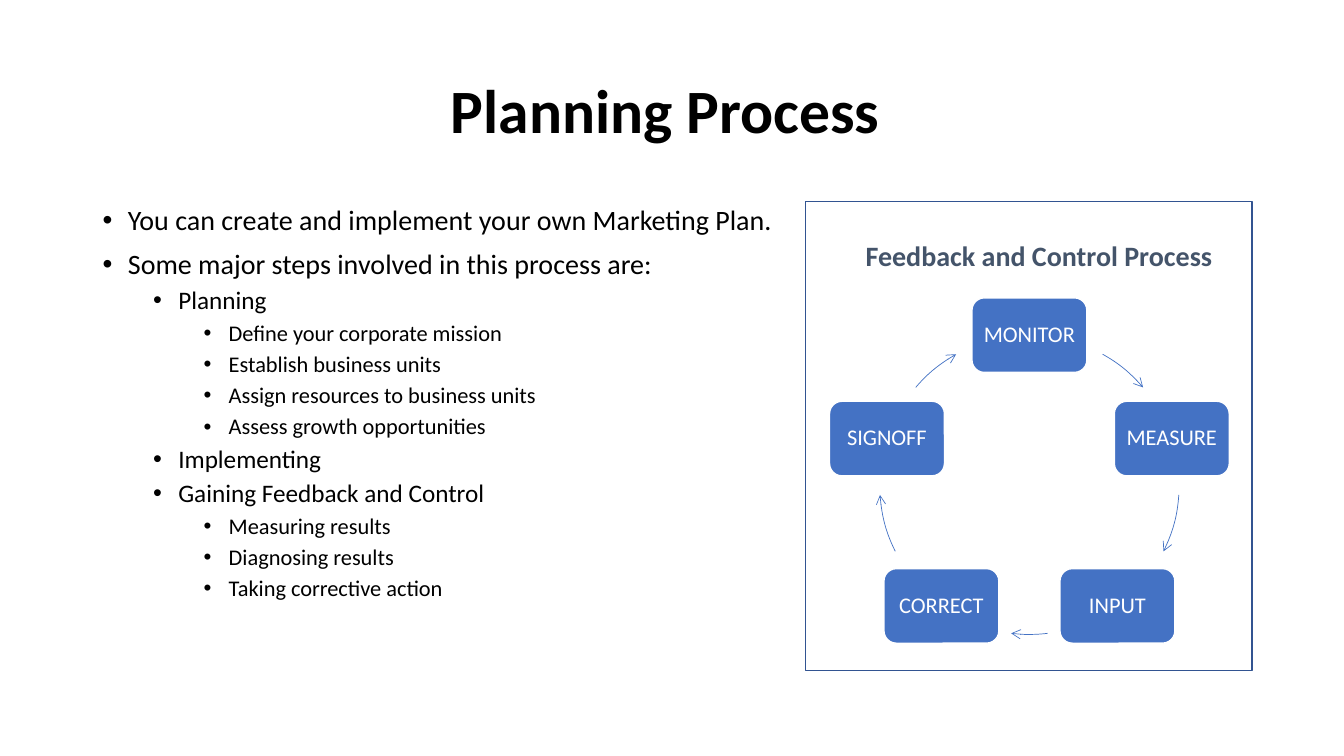
from dataclasses import dataclass
from math import cos, radians, sin

from lxml.etree import SubElement
from pptx import Presentation
from pptx.dml.color import RGBColor
from pptx.enum.shapes import MSO_SHAPE
from pptx.enum.text import MSO_ANCHOR, PP_ALIGN
from pptx.oxml.ns import qn
from pptx.util import Inches, Pt


@dataclass(frozen=True)
class Theme:
    font: str = "Calibri"
    black: str = "000000"
    white: str = "FFFFFF"
    blue: str = "4472C4"
    frame: str = "325491"
    heading: str = "44546A"
    title_size: int = 44
    heading_size: int = 20
    node_size: int = 16
    level_sizes: tuple = (20, 18, 16)


THEME = Theme()

# Outline: level and wording
STEPS = [
    (0, "You can create and implement your own Marketing Plan."),
    (0, "Some major steps involved in this process are:"),
    (1, "Planning"),
    (2, "Define your corporate mission"),
    (2, "Establish business units"),
    (2, "Assign resources to business units"),
    (2, "Assess growth opportunities"),
    (1, "Implementing"),
    (1, "Gaining Feedback and Control"),
    (2, "Measuring results"),
    (2, "Diagnosing results"),
    (2, "Taking corrective action"),
]

# Cycle: clockwise from the top, each with the angles of the arrow that follows
CYCLE = [
    ("MONITOR", 299.3, 319.4),
    ("MEASURE", 3.9, 26.4),
    ("INPUT", 83, 97),
    ("CORRECT", 153.6, 176.1),
    ("SIGNOFF", 220.6, 240.7),
]
CENTER_X, CENTER_Y, RADIUS = 10.21, 4.81, 1.485
NODE_W, NODE_H = 1.14, 0.74


def rgb(color):
    return RGBColor.from_string(color)


def style(p, size, color, bold=False, align=None, spacing=None):
    p.font.name = THEME.font
    p.font.size = Pt(size)
    p.font.bold = bold
    p.font.color.rgb = rgb(color)
    p.alignment = align
    p.line_spacing = spacing


def add_text_box(s, left, top, width, height, anchor=MSO_ANCHOR.TOP):
    box = s.shapes.add_textbox(Inches(left), Inches(top), Inches(width), Inches(height))
    tf = box.text_frame
    tf.word_wrap = True
    tf.vertical_anchor = anchor
    return tf


def add_shape(s, kind, left, top, width, height, fill, line, weight):
    sp = s.shapes.add_shape(
        kind, Inches(left), Inches(top), Inches(width), Inches(height))
    sp.shadow.inherit = False
    if fill:
        sp.fill.solid()
        sp.fill.fore_color.rgb = rgb(fill)
    else:
        sp.fill.background()
    sp.line.color.rgb = rgb(line)
    sp.line.width = Pt(weight)
    return sp


def add_line_of_text(s, text, left, top, width, height, size, color, spacing, anchor):
    p = add_text_box(s, left, top, width, height, anchor).paragraphs[0]
    p.text = text
    style(p, size, color, True, PP_ALIGN.CENTER, spacing)


def add_outline(s, items, left, top, width, height):
    tf = add_text_box(s, left, top, width, height)
    for i, (level, text) in enumerate(items):
        p = tf.add_paragraph() if i else tf.paragraphs[0]
        p.text = text
        p.level = level
        style(p, THEME.level_sizes[level], THEME.black, spacing=0.9)
        p.space_before = Pt(5 if level else 10)
        # Bullet with a hanging indent
        props = p._p.get_or_add_pPr()
        props.set("marL", str(Inches(0.25 + 0.5 * level)))
        props.set("indent", str(Inches(-0.25)))
        SubElement(props, qn("a:buFont")).set("typeface", "Arial")
        SubElement(props, qn("a:buChar")).set("char", "•")


def add_node(s, label, angle):
    x = CENTER_X + RADIUS * cos(radians(angle))
    y = CENTER_Y + RADIUS * sin(radians(angle))
    sp = add_shape(s, MSO_SHAPE.ROUNDED_RECTANGLE, x - NODE_W / 2, y - NODE_H / 2,
                   NODE_W, NODE_H, THEME.blue, THEME.white, 1)
    tf = sp.text_frame
    tf.margin_left = tf.margin_right = tf.margin_top = tf.margin_bottom = Inches(0.07)
    tf.vertical_anchor = MSO_ANCHOR.MIDDLE
    p = tf.paragraphs[0]
    p.text = label
    style(p, THEME.node_size, THEME.white, align=PP_ALIGN.CENTER, spacing=0.9)


def add_arc_arrow(s, start, end):
    sp = add_shape(s, MSO_SHAPE.ARC, CENTER_X - RADIUS, CENTER_Y - RADIUS,
                   2 * RADIUS, 2 * RADIUS, None, THEME.blue, 0.5)
    # Arc angles are in 60000ths of a degree, adjustments in 100000ths
    sp.adjustments[0] = start * 0.6
    sp.adjustments[1] = end * 0.6
    SubElement(sp.line._get_or_add_ln(), qn("a:tailEnd")).set("type", "arrow")


def add_cycle(s, steps):
    for i, (label, start, end) in enumerate(steps):
        add_node(s, label, -90 + i * 360 / len(steps))
        add_arc_arrow(s, start, end)


def main():
    prs = Presentation()
    prs.slide_width, prs.slide_height = Inches(13.33), Inches(7.5)
    s = prs.slides.add_slide(prs.slide_layouts[6])

    # Title
    add_line_of_text(s, "Planning Process ", 0.92, 0.4, 11.5, 1.45,
                     THEME.title_size, THEME.black, 0.9, MSO_ANCHOR.MIDDLE)

    # Framed feedback cycle
    add_shape(s, MSO_SHAPE.RECTANGLE, 7.99, 2, 4.43, 4.65, THEME.white, THEME.frame, 1)
    add_cycle(s, CYCLE)
    add_line_of_text(s, "Feedback and Control Process", 8.46, 2.32, 3.69, 0.44,
                     THEME.heading_size, THEME.heading, 1.0, MSO_ANCHOR.TOP)

    # Steps
    add_outline(s, STEPS, 0.92, 2, 6.85, 4.83)

    prs.save("out.pptx")


if __name__ == "__main__":
    main()
